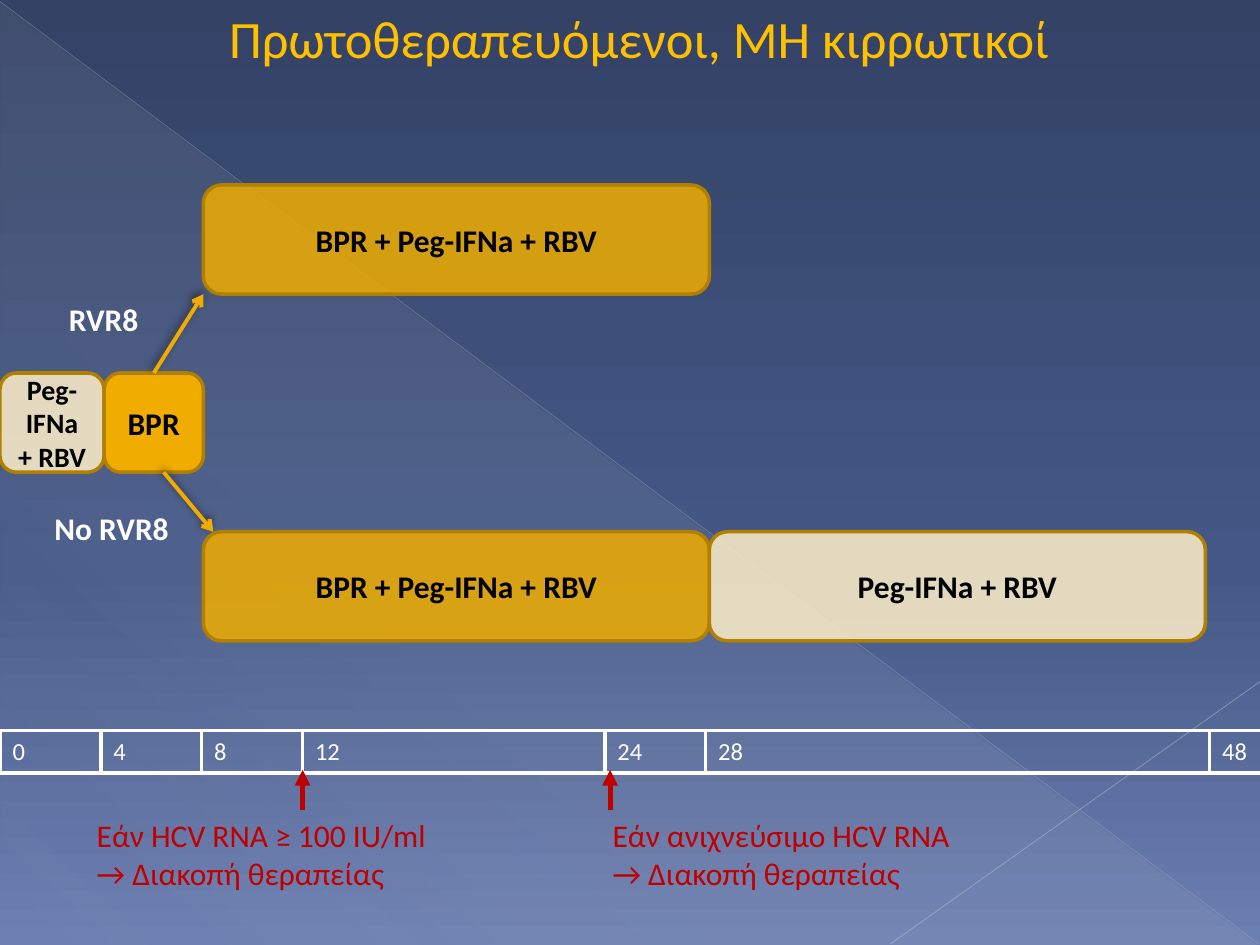
"""Build a slide showing a treatment schedule above a timeline in weeks."""
import pptx
import pptx.util
from pptx.dml.color import RGBColor
from pptx.enum.shapes import MSO_CONNECTOR, MSO_SHAPE
from pptx.enum.text import MSO_ANCHOR, MSO_AUTO_SIZE, PP_ALIGN
from pptx.oxml import parse_xml
from pptx.oxml.ns import nsdecls
from pptx.util import Cm, Pt

GOLD = RGBColor(0xFF, 0xC0, 0x00)
AMBER = RGBColor(0xF0, 0xAD, 0x00)
CREAM = RGBColor(0xFF, 0xF0, 0xC9)
BROWN = RGBColor(0xB2, 0x80, 0x00)
RED = RGBColor(0xC0, 0x00, 0x00)
WHITE = RGBColor(0xFF, 0xFF, 0xFF)
BLACK = RGBColor(0x00, 0x00, 0x00)
PALE = RGBColor(0xB9, 0xBD, 0xC8)
PALE_LIGHT = RGBColor(0xC1, 0xC4, 0xCE)

WIDTH, HEIGHT = 25.4, 19.05
BACKGROUND_STOPS = [(0, "334265", 100), (60, "445887", 100), (100, "6C7FB1", 100)]
TRIANGLE_STOPS = [(0, "D4D4D6", 10), (70, "D4D4D6", 8), (100, "D4D4D6", 1)]
BACKDROP_LINES = [
    ((0, 0.03), (25.37, 19.02), PALE, 0.39, 35),
    ((25.4, 13.74), (17.96, 19.02), PALE_LIGHT, 0.47, 45),
]
LEFT, CENTER = PP_ALIGN.LEFT, PP_ALIGN.CENTER
LABELS = [
    ("Πρωτοθεραπευόμενοι, ΜΗ κιρρωτικοί", (0.89, 0, 24, 1.55),
     dict(size=30, color=GOLD, align=CENTER)),
    ("RVR8", (0.89, 5.93, 2.4, 1.02), dict(color=WHITE, bold=True, align=CENTER)),
    ("No RVR8", (0.5, 10.13, 3.5, 1.02), dict(color=WHITE, bold=True, align=CENTER)),
    ("Εάν HCV RNA ≥ 100 IU/ml → Διακοπή θεραπείας", (1.7, 16.33, 7.6, 1.8), dict(color=RED)),
    ("Εάν ανιχνεύσιμο HCV RNA → Διακοπή θεραπείας", (12.1, 16.33, 7.6, 1.8), dict(color=RED)),
]
PHASES = [
    ("Peg-IFNa + RBV", (0, 7.52, 2.1, 2), CREAM, 85, 16),
    ("BPR", (2.1, 7.52, 2, 2), AMBER, 100, 18),
    ("BPR + Peg-IFNa + RBV", (4.1, 3.73, 10.2, 2.2), AMBER, 85, 18),
    ("BPR + Peg-IFNa + RBV", (4.1, 10.72, 10.2, 2.2), AMBER, 85, 18),
    ("Peg-IFNa + RBV", (14.3, 10.72, 10, 2.2), CREAM, 85, 18),
]
BRANCHES = [((3.1, 7.52), (4.1, 5.93)), ((3.3, 9.52), (4.3, 10.72))]
STOP_POSITIONS = [12.3, 6.1]
WEEKS = [0, 4, 8, 12, 24, 28, 48]
WEEKS_PER_COLUMN, COLUMNS = 2, 25


def write_text(frame, text, size=18, color=BLACK, bold=False, align=LEFT):
    """Write one formatted paragraph into a text frame."""
    paragraph = frame.paragraphs[0]
    paragraph.alignment = align
    run = paragraph.add_run()
    run.text = text
    run.font.name = "Calibri"
    run.font.size = Pt(size)
    run.font.bold = bold
    run.font.color.rgb = color


def add_xml(parent, markup):
    """Append a drawing element to its parent."""
    tag, rest = markup[:-1].split(" ", 1) if " " in markup.split(">")[0] else (None, None)
    if tag is None:
        cut = min(index for index in (markup.find(">"), markup.find("/>")) if index >= 0)
        tag, rest = markup[:cut], markup[cut:-1]
    parent.append(parse_xml(f"{tag} {nsdecls('a')} {rest}>"))


def gradient(stops, angle):
    """Return a linear gradient fill element."""
    marks = "".join(
        f'<a:gs pos="{position * 1000}"><a:srgbClr val="{color}">'
        f'<a:alpha val="{alpha * 1000}"/></a:srgbClr></a:gs>'
        for position, color, alpha in stops)
    return parse_xml(f'<a:gradFill {nsdecls("a")} rotWithShape="1"><a:gsLst>{marks}</a:gsLst>'
                     f'<a:lin ang="{angle * 60000}" scaled="0"/></a:gradFill>')


def set_alpha(properties, alpha):
    """Make the solid fill below a properties element partly transparent."""
    color = properties.xpath("./a:solidFill/a:srgbClr")[0]
    add_xml(color, f'<a:alpha val="{alpha * 1000}"/>')


def add_line(slide, begin, end, color, width, arrow="", shadow=""):
    """Add a straight connector with an optional arrowhead and shadow."""
    points = [Cm(value) for value in (*begin, *end)]
    connector = slide.shapes.add_connector(MSO_CONNECTOR.STRAIGHT, *points)
    connector.line.color.rgb = color
    connector.line.width = Pt(width)
    if arrow:
        add_xml(connector.line._get_or_add_ln(), arrow)
    properties = connector.element.spPr
    properties.append(parse_xml(f'<a:effectLst {nsdecls("a")}>{shadow}</a:effectLst>'))
    return connector


def add_backdrop(slide):
    """Paint the background gradient, the triangle and the thin lines."""
    slide.background.fill.solid()
    background = slide.element.xpath("./p:cSld/p:bg/p:bgPr")[0]
    background.replace(background[0], gradient(BACKGROUND_STOPS, 90))
    triangle = slide.shapes.add_shape(
        MSO_SHAPE.RIGHT_TRIANGLE, Cm(0.02), Cm(0.05), Cm(25.35), Cm(19))
    triangle.shadow.inherit = False
    triangle.line.fill.background()
    triangle.fill.solid()
    properties = triangle.element.spPr
    properties.replace(properties.xpath("./a:solidFill")[0], gradient(TRIANGLE_STOPS, 133))
    for begin, end, color, width, alpha in BACKDROP_LINES:
        connector = add_line(slide, begin, end, color, width)
        set_alpha(connector.line._get_or_add_ln(), alpha)


def add_timeline(slide):
    """Add the week scale as a one-row table."""
    table = slide.shapes.add_table(
        1, COLUMNS, Cm(0), Cm(14.73), Cm(WIDTH), Cm(0.8)).table
    table.first_row = table.horz_banding = False
    starts = {week // WEEKS_PER_COLUMN: week for week in WEEKS}
    for index, cell in enumerate(table.iter_cells()):
        table.columns[index].width = Cm(WIDTH / COLUMNS)
        cell.margin_right = Cm(0)
        if index in starts:
            write_text(cell.text_frame, str(starts[index]), size=14, color=WHITE)
        else:
            add_xml(cell.text_frame.paragraphs[0]._p, '<a:endParaRPr sz="1400"/>')
        visible = {"L": index in starts, "R": index + 1 in starts, "T": True, "B": True}
        properties = cell._tc.get_or_add_tcPr()
        for side, shown in visible.items():
            paint = f'<a:solidFill><a:srgbClr val="{WHITE}"/></a:solidFill>' if shown else "<a:noFill/>"
            add_xml(properties, f'<a:ln{side} w="{Pt(2.25)}">{paint}</a:ln{side}>')
        cell.fill.background()


def add_phase(slide, text, place, color, alpha, size):
    """Add one rounded treatment bar."""
    shape = slide.shapes.add_shape(
        MSO_SHAPE.ROUNDED_RECTANGLE, *[Cm(value) for value in place])
    shape.shadow.inherit = False
    shape.fill.solid()
    shape.fill.fore_color.rgb = color
    set_alpha(shape.element.spPr, alpha)
    shape.line.color.rgb = BROWN
    shape.line.width = Pt(2)
    shape.text_frame.vertical_anchor = MSO_ANCHOR.MIDDLE
    write_text(shape.text_frame, text, size=size, bold=True, align=CENTER)
    return shape


def main():
    """Assemble and save the slide."""
    presentation = pptx.Presentation()
    presentation.slide_width, presentation.slide_height = Cm(WIDTH), Cm(HEIGHT)
    slide = presentation.slides.add_slide(presentation.slide_layouts[6])
    add_backdrop(slide)
    add_timeline(slide)
    bars = [add_phase(slide, *phase) for phase in PHASES]
    shadow = (f'<a:outerShdw blurRad="{Pt(5)}" dist="{Pt(2)}" dir="{245 * 60000}">'
              '<a:srgbClr val="000000"><a:alpha val="50000"/></a:srgbClr></a:outerShdw>')
    branches = [add_line(slide, begin, end, AMBER, 2.25, '<a:tailEnd type="arrow"/>', shadow)
                for begin, end in BRANCHES]
    branches[0].begin_connect(bars[1], 0)
    for left in STOP_POSITIONS:
        add_line(slide, (left, 15.52), (left, 16.33), RED, 3, '<a:headEnd type="triangle"/>')
    for text, place, style in LABELS:
        box = slide.shapes.add_textbox(*[Cm(value) for value in place])
        box.text_frame.word_wrap = True
        box.text_frame.auto_size = MSO_AUTO_SIZE.SHAPE_TO_FIT_TEXT
        write_text(box.text_frame, text, **style)
    presentation.save("out.pptx")


if __name__ == "__main__":
    main()
